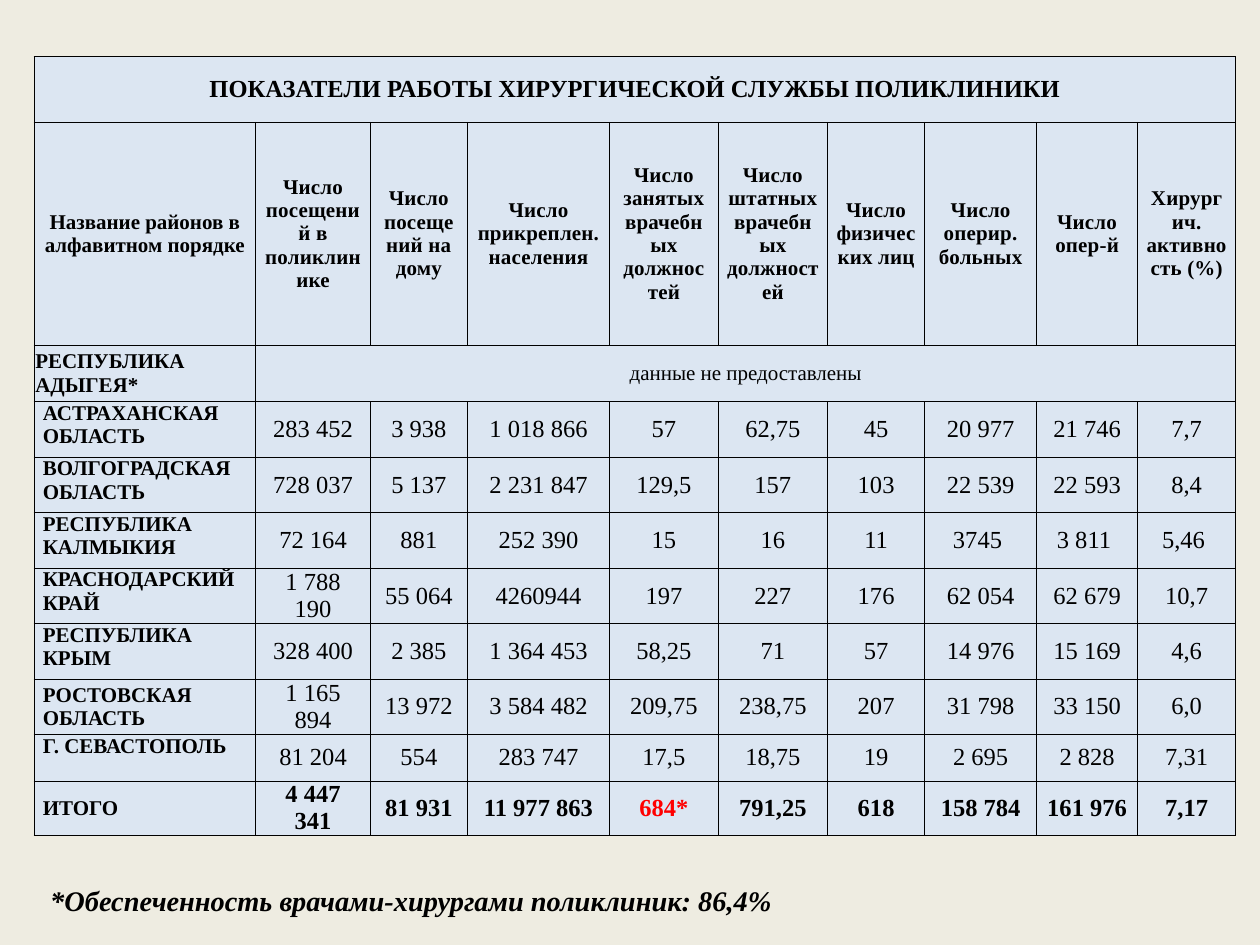
import pptx
import pptx.util
import pptx.dml.color
import pptx.enum.text
import pptx.oxml
import pptx.oxml.ns

Inches = pptx.util.Inches
Pt = pptx.util.Pt
ALIGN = pptx.enum.text.PP_ALIGN
ANCHOR = pptx.enum.text.MSO_ANCHOR

FONT = "Times New Roman"
BLACK, RED, PALE, CREAM = "000000", "FF0000", "DCE6F2", "EEECE1"

TITLE = "ПОКАЗАТЕЛИ РАБОТЫ ХИРУРГИЧЕСКОЙ СЛУЖБЫ ПОЛИКЛИНИКИ"
HEADS = [
    "Название районов в алфавитном порядке",
    "Число посещений в поликлинике",
    "Число посещений на дому",
    "Число прикреплен. населения",
    "Число занятых врачебных должностей",
    "Число штатных врачебных должностей",
    "Число физических лиц",
    "Число оперир. больных",
    "Число опер-й",
    "Хирургич. активность (%)",
]
MISSING = ["РЕСПУБЛИКА АДЫГЕЯ*", "данные не предоставлены"]
REGIONS = [
    ["АСТРАХАНСКАЯ ОБЛАСТЬ", "283 452", "3 938", "1 018 866", "57", "62,75", "45",
     "20 977", "21 746", "7,7"],
    ["ВОЛГОГРАДСКАЯ ОБЛАСТЬ", "728 037", "5 137", "2 231 847", "129,5", "157", "103",
     "22 539", "22 593", "8,4"],
    ["РЕСПУБЛИКА КАЛМЫКИЯ", "72 164", "881", "252 390", "15", "16", "11",
     "3745", "3 811", "5,46"],
    ["КРАСНОДАРСКИЙ КРАЙ", "1 788 190", "55 064", "4260944", "197", "227", "176",
     "62 054", "62 679", "10,7"],
    ["РЕСПУБЛИКА КРЫМ", "328 400", "2 385", "1 364 453", "58,25", "71", "57",
     "14 976", "15 169", "4,6"],
    ["РОСТОВСКАЯ ОБЛАСТЬ", "1 165 894", "13 972", "3 584 482", "209,75", "238,75", "207",
     "31 798", "33 150", "6,0"],
    ["Г. СЕВАСТОПОЛЬ", "81 204", "554", "283 747", "17,5", "18,75", "19",
     "2 695", "2 828", "7,31"],
    ["ИТОГО", "4 447 341", "81 931", "11 977 863", "684*", "791,25", "618",
     "158 784", "161 976", "7,17"],
]
MIDDLE = ("РОСТОВСКАЯ ОБЛАСТЬ", "ИТОГО")
SHIFTED = ("3745", "3 811", "5,46")
WIDTHS = [1.76, 0.91, 0.77, 1.13, 0.86, 0.87, 0.77, 0.89, 0.8, 0.78]
HEIGHTS = [0.52, 1.77, 0.45] + [0.44] * 6 + [0.37] * 2
NOTE = "*Обеспеченность врачами-хирургами поликлиник: 86,4%"


def color(code):
    return pptx.dml.color.RGBColor.from_string(code)


def style(frame, size, bold, ink=BLACK, align=ALIGN.LEFT, italic=False):
    for para in frame.paragraphs:
        para.alignment = align
        for run in para.runs:
            font = run.font
            font.name, font.size = FONT, Pt(size)
            font.bold, font.italic = bold, italic
            font.color.rgb = color(ink)


def track(frame, points):
    """Set the letter spacing."""
    for para in frame.paragraphs:
        for run in para.runs:
            run._r.get_or_add_rPr().set("spc", str(round(points * 100)))


def border(cell):
    props = cell._tc.get_or_add_tcPr()
    for side in ("lnL", "lnR", "lnT", "lnB"):
        props.append(pptx.oxml.parse_xml(
            f'<a:{side} {pptx.oxml.ns.nsdecls("a")} w="{Pt(0.5)}">'
            f'<a:solidFill><a:srgbClr val="{BLACK}"/></a:solidFill></a:{side}>'))


def write(cell, text, size=12, bold=True, ink=BLACK, align=ALIGN.CENTER,
          anchor=ANCHOR.MIDDLE, inset=0.07):
    cell.text_frame.text = text
    style(cell.text_frame, size, bold, ink, align)
    cell.vertical_anchor = anchor
    cell.margin_left = cell.margin_right = Inches(inset)


def add_grid(slide, left, top, width, height):
    """Place the table of regions."""
    table = slide.shapes.add_table(
        len(HEIGHTS), len(WIDTHS), Inches(left), Inches(top),
        Inches(width), Inches(height)).table
    table.first_row = table.horz_banding = False
    for col, wide in zip(table.columns, WIDTHS):
        col.width = Inches(wide)
    for row, high in zip(table.rows, HEIGHTS):
        row.height = Inches(high)
    for cell in table.iter_cells():
        border(cell)
        cell.fill.solid()
        cell.fill.fore_color.rgb = color(PALE)
        cell.margin_top = cell.margin_bottom = 0

    last = len(WIDTHS) - 1
    table.cell(0, 0).merge(table.cell(0, last))
    table.cell(2, 1).merge(table.cell(2, last))
    write(table.cell(0, 0), TITLE, size=14, inset=0.01)
    for c, head in enumerate(HEADS):
        write(table.cell(1, c), head)
        if c:
            track(table.cell(1, c).text_frame, 0.1)
    write(table.cell(2, 0), MISSING[0], align=ALIGN.LEFT, inset=0.01)
    write(table.cell(2, 1), MISSING[1], bold=False, inset=0.01)

    for r, (name, *values) in enumerate(REGIONS, 3):
        anchor = ANCHOR.MIDDLE if name in MIDDLE else ANCHOR.TOP
        write(table.cell(r, 0), name, align=ALIGN.LEFT, anchor=anchor)
        for c, value in enumerate(values, 1):
            cell = table.cell(r, c)
            write(cell, value, size=14, bold=name == "ИТОГО",
                  ink=RED if value.endswith("*") else BLACK)
            if value in SHIFTED:
                cell.margin_right = Inches(0.12)


def add_note(slide, left, top, width, height):
    box = slide.shapes.add_textbox(
        Inches(left), Inches(top), Inches(width), Inches(height))
    frame = box.text_frame
    frame.word_wrap = True
    frame.vertical_anchor = ANCHOR.BOTTOM
    frame.margin_bottom = 0
    frame.text = NOTE
    style(frame, 16.2, True, italic=True)


def main():
    deck = pptx.Presentation()
    deck.slide_width, deck.slide_height = Inches(10), Inches(7.5)
    slide = deck.slides.add_slide(deck.slide_layouts[6])
    slide.background.fill.solid()
    slide.background.fill.fore_color.rgb = color(CREAM)
    add_grid(slide, 0.27, 0.45, sum(WIDTHS), sum(HEIGHTS))
    add_note(slide, 0.3, 6.74, 8.19, 0.54)
    deck.save("out.pptx")


if __name__ == "__main__":
    main()
